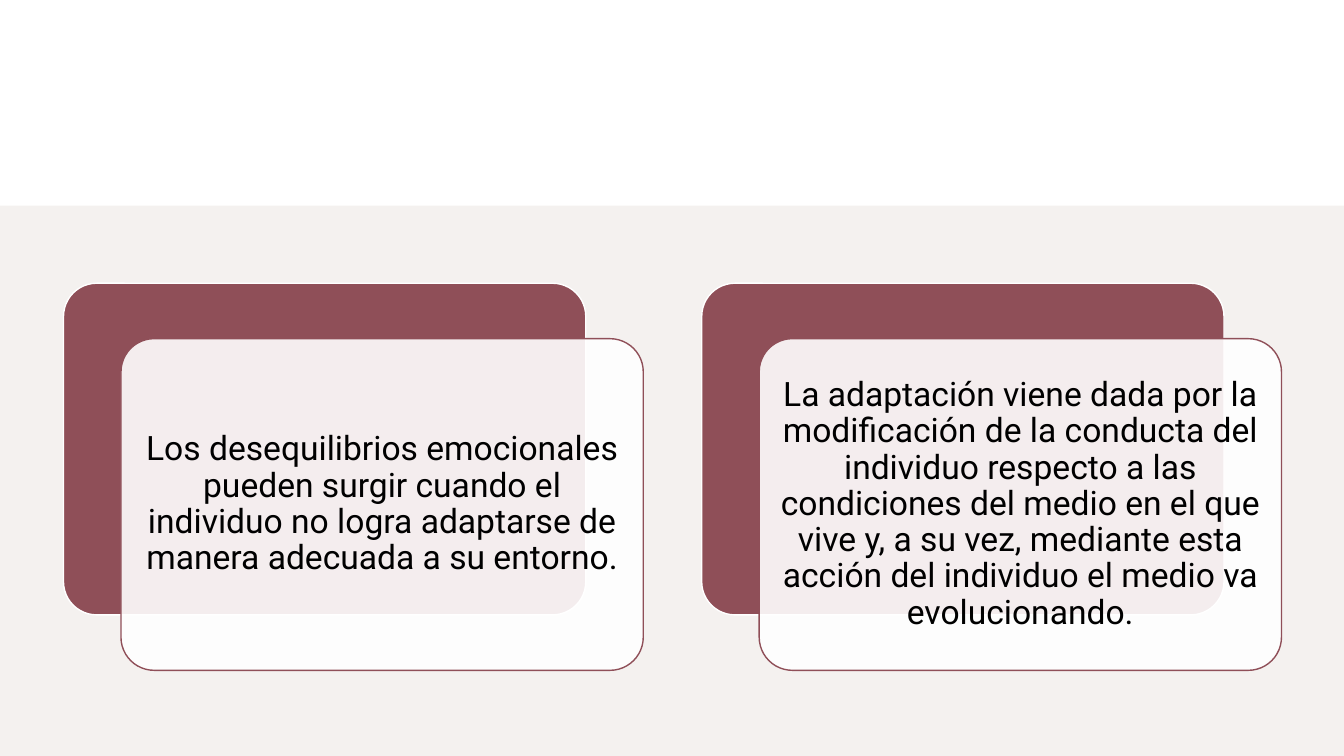
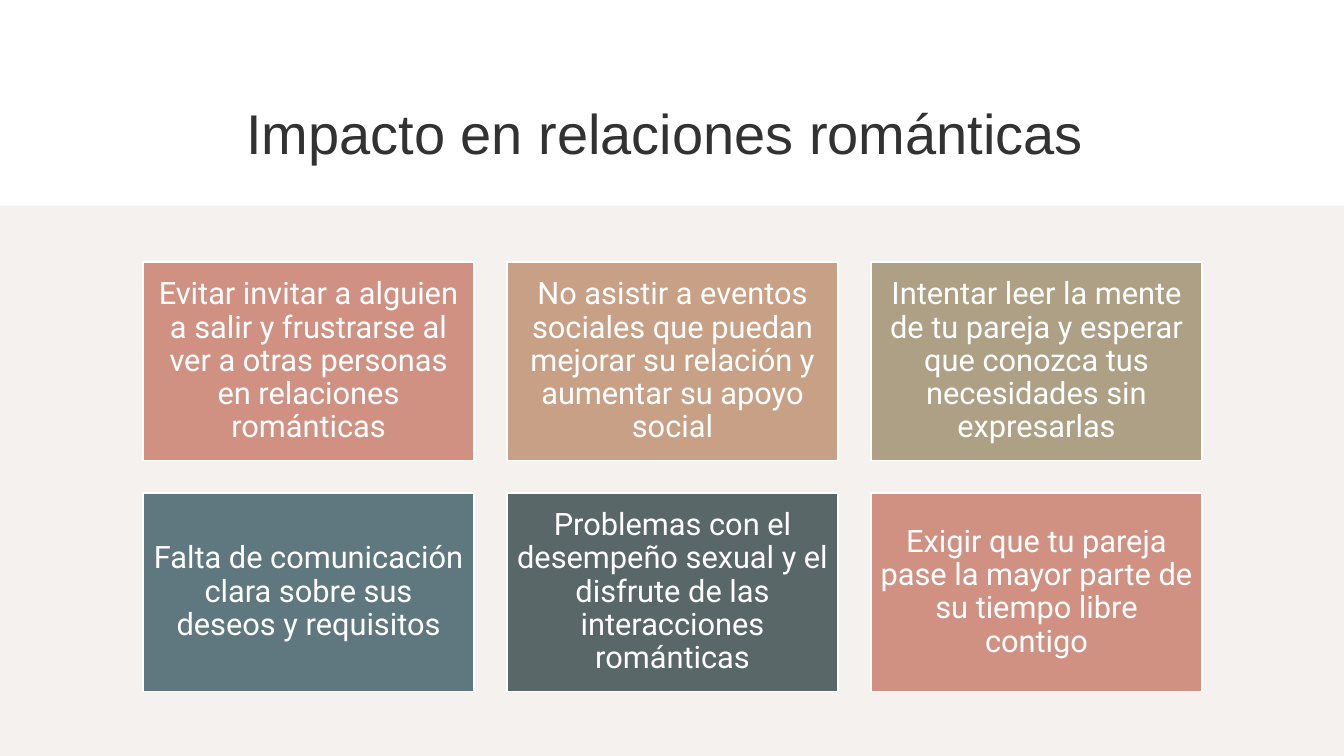
from dataclasses import dataclass
from pptx import Presentation
from pptx.dml.color import RGBColor as RGB
from pptx.enum.shapes import MSO_SHAPE as Kind
from pptx.enum.text import MSO_ANCHOR as Anchor, PP_ALIGN as Align
from pptx.oxml.xmlchemy import OxmlElement as Node
from pptx.util import Pt

PX = 9144


@dataclass(frozen=True)
class Theme:
    white: str = "FFFFFF"
    black: str = "000000"
    ink: str = "323232"
    band: str = "F4F1EF"
    wine: str = "8F4F58"
    tiles: tuple = ("D09182", "C7A085", "ADA085", "5F787F", "5A6768")
    head: str = "Arial"
    body: str = "Roboto"
    title: int = 40
    card: int = 24
    tile: int = 22


theme = Theme()


def box(slide, kind, x, y, w, h, fill, edge=None):
    shape = slide.shapes.add_shape(kind, x * PX, y * PX, w * PX, h * PX)
    shape.shadow.inherit = False
    shape.fill.solid()
    shape.fill.fore_color.rgb = RGB.from_string(fill)
    if edge:
        shape.line.color.rgb = RGB.from_string(edge)
        shape.line.width = Pt(1)
    else:
        shape.line.fill.background()
    if kind == Kind.ROUNDED_RECTANGLE:
        shape.adjustments[0] = 0.1
    return shape


def write(shape, text, face, size, color, pad, lead=None):
    frame = shape.text_frame
    frame.word_wrap = True
    frame.vertical_anchor = Anchor.MIDDLE
    frame.margin_left = frame.margin_right = pad * PX
    frame.margin_top = frame.margin_bottom = pad * PX
    para = frame.paragraphs[0]
    para.text = text
    para.alignment = Align.CENTER
    para.line_spacing = lead
    para.font.name = face
    para.font.size = Pt(size)
    para.font.color.rgb = RGB.from_string(color)


deck = Presentation()
deck.slide_width, deck.slide_height = 1333 * PX, 750 * PX
cause = deck.slides.add_slide(deck.slide_layouts[6])
impact = deck.slides.add_slide(deck.slide_layouts[5])
for slide in (cause, impact):
    box(slide, Kind.RECTANGLE, 0, 204, 1333, 546, theme.band)

cards = (
    "Los desequilibrios emocionales pueden surgir cuando el individuo no logra "
    "adaptarse de manera adecuada a su entorno.",
    "La adaptación viene dada por la modificación de la conducta del individuo "
    "respecto a las condiciones del medio en el que vive y, a su vez, mediante "
    "esta acción del individuo el medio va evolucionando.",
)
for i, text in enumerate(cards):
    x = 63 + 633 * i
    box(cause, Kind.ROUNDED_RECTANGLE, x, 281, 518, 329, theme.wine, theme.white)
    card = box(cause, Kind.ROUNDED_RECTANGLE, x + 57, 336, 518, 329, theme.white, theme.wine)
    alpha = Node("a:alpha")
    alpha.set("val", "90000")
    card.fill._xPr.solidFill.srgbClr.append(alpha)
    write(card, text, theme.body, theme.card, theme.black, 10, 0.9)

title = impact.shapes.title
title.left, title.top, title.width, title.height = 148 * PX, 77 * PX, 1022 * PX, 109 * PX
write(title, "Impacto en relaciones románticas", theme.head, theme.title, theme.ink, 5)

tiles = (
    "Evitar invitar a alguien a salir y frustrarse al ver a otras personas en relaciones románticas",
    "No asistir a eventos sociales que puedan mejorar su relación y aumentar su apoyo social",
    "Intentar leer la mente de tu pareja y esperar que conozca tus necesidades sin expresarlas",
    "Falta de comunicación clara sobre sus deseos y requisitos",
    "Problemas con el desempeño sexual y el disfrute de las interacciones románticas",
    "Exigir que tu pareja pase la mayor parte de su tiempo libre contigo",
)
for i, text in enumerate(tiles):
    row, col = divmod(i, 3)
    fill = theme.tiles[i % len(theme.tiles)]
    tile = box(impact, Kind.RECTANGLE, 142 + 361 * col, 260 + 229 * row, 328, 197, fill, theme.white)
    write(tile, text, theme.body, theme.tile, theme.white, 9, 0.9)

deck.save("out.pptx")
